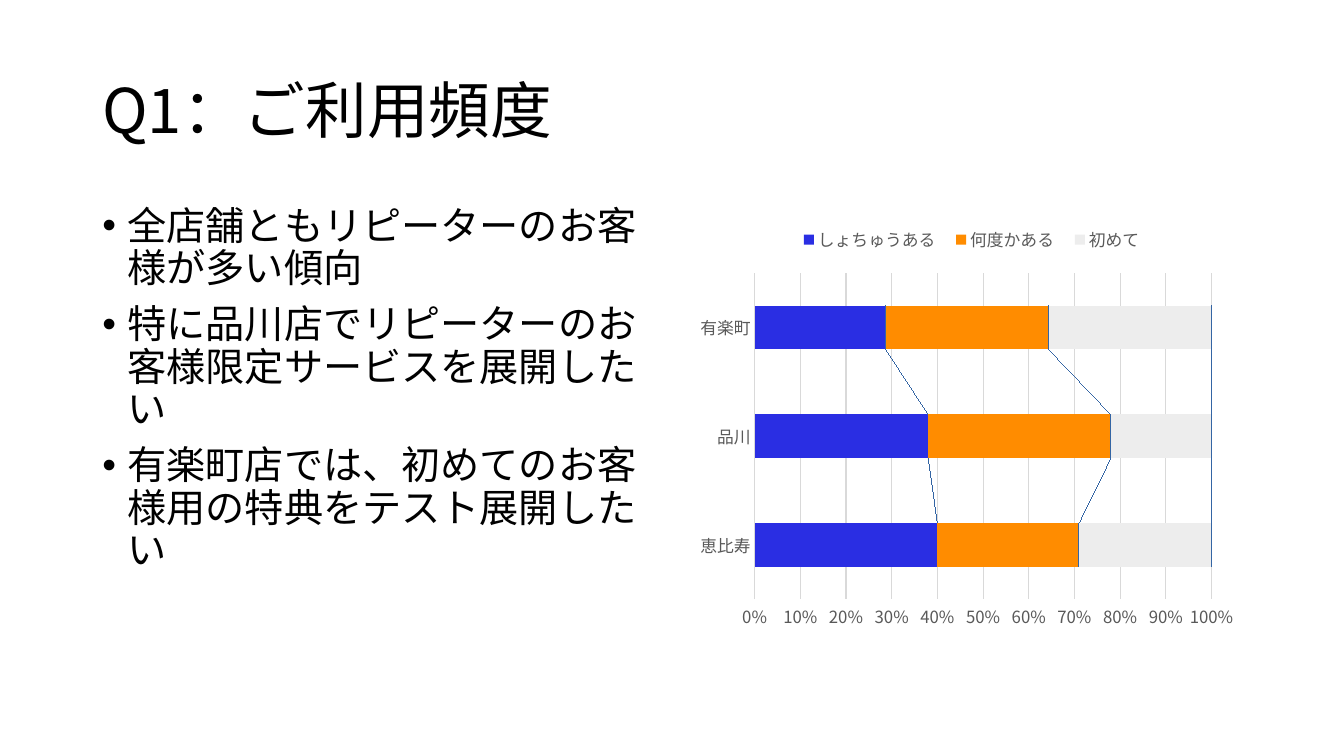
"""Build the Q1 visit frequency slide: title, findings and a stacked bar chart."""
from lxml import etree
from pptx import Presentation
from pptx.chart.data import CategoryChartData
from pptx.dml.color import RGBColor
from pptx.enum.chart import XL_CHART_TYPE, XL_LEGEND_POSITION, XL_TICK_MARK
from pptx.enum.text import MSO_ANCHOR
from pptx.oxml import parse_xml
from pptx.oxml.ns import nsdecls, qn
from pptx.util import Pt

STACKED = XL_CHART_TYPE.BAR_STACKED_100
BOTTOM = XL_LEGEND_POSITION.BOTTOM
NO_TICK = XL_TICK_MARK.NONE
MIDDLE, TOP = MSO_ANCHOR.MIDDLE, MSO_ANCHOR.TOP

THEME = {
    "font": "Noto Sans CJK JP",
    "ink": RGBColor.from_string("000000"),
    "label": RGBColor.from_string("595959"),
    "grid": RGBColor.from_string("D9D9D9"),
    "bars": [RGBColor.from_string(c) for c in ("2A2EE3", "FF8C00", "EDEDED")],
    "title": Pt(44),
    "body": Pt(28),
    "axis": Pt(12),
}


def style(font, size, color):
    font.size = size
    font.color.rgb = color
    font.name = THEME["font"]
    east = etree.SubElement(font._element, qn("a:ea"))
    east.set("typeface", THEME["font"])


def place(box, lines, size, anchor):
    shape = deck_slide.shapes.add_textbox(*[Pt(n) for n in box])
    frame = shape.text_frame
    frame.word_wrap = True
    frame.vertical_anchor = anchor
    frame.text = "\n".join(lines)
    for para in frame.paragraphs:
        para.line_spacing = 0.9
        style(para.runs[0].font, size, THEME["ink"])
    return frame


deck = Presentation()
deck.slide_width, deck.slide_height = Pt(960), Pt(540)
deck_slide = deck.slides.add_slide(deck.slide_layouts[6])

place((66, 28.75, 828, 104.4), ["Q1：ご利用頻度"], THEME["title"], MIDDLE)

points = [
    "全店舗ともリピーターのお客様が多い傾向",
    "特に品川店でリピーターのお客様限定サービスを展開したい",
    "有楽町店では、初めてのお客様用の特典をテスト展開したい",
]
body = place((66, 143.75, 408, 342.6), points, THEME["body"], TOP)
for para in body.paragraphs:
    para.space_before = Pt(10)
    props = para._p.get_or_add_pPr()
    props.set("marL", str(Pt(18)))
    props.set("indent", str(-Pt(18)))
    etree.SubElement(props, qn("a:buFont")).set("typeface", "Arial")
    etree.SubElement(props, qn("a:buChar")).set("char", "•")

data = CategoryChartData()
data.categories = ["恵比寿", "品川", "有楽町"]
data.add_series("しょちゅうある", (40, 38, 29))
data.add_series("何度かある", (31, 40, 36))
data.add_series("初めて", (29, 22, 36))
graph = deck_slide.shapes.add_chart(
    STACKED, Pt(486), Pt(143.75), Pt(408), Pt(342.6), data)
chart = graph.chart
chart.has_title = False
chart.font.name = THEME["font"]
chart.has_legend = True
legend = chart.legend
legend.position = BOTTOM
legend.include_in_layout = False

plot = chart.plots[0]
plot.gap_width, plot.overlap = 150, 100
plot.vary_by_categories = False
for bar, color in zip(plot.series, THEME["bars"]):
    bar.format.fill.solid()
    bar.format.fill.fore_color.rgb = color
overlap = plot._element.find(qn("c:overlap"))
overlap.addnext(parse_xml(f"<c:serLines {nsdecls('c')}/>"))

cats, vals = chart.category_axis, chart.value_axis
for axis in (cats, vals):
    axis.major_tick_mark = axis.minor_tick_mark = NO_TICK
for part in (cats.tick_labels, vals.tick_labels, legend):
    style(part.font, THEME["axis"], THEME["label"])
vals.tick_labels.number_format = "0%"
vals.tick_labels.number_format_is_linked = False
vals.minimum_scale, vals.maximum_scale, vals.major_unit = 0, 1, 0.1
vals.format.line.fill.background()
vals.has_major_gridlines = True
for line in (cats.format.line, vals.major_gridlines.format.line):
    line.color.rgb = THEME["grid"]
    line.width = Pt(0.75)

area = chart._chartSpace.chart.plotArea
for old in area.findall(qn("c:layout")):
    area.remove(old)
spots = [
    (area, 0, "inner", (0.13, 0.15, 0.8, 0.68)),
    (legend._element, 1, None, (0.19, 0.05, 0.64, 0.06)),
]
for old in legend._element.findall(qn("c:layout")):
    legend._element.remove(old)
for host, index, target, box in spots:
    inner = f'<c:layoutTarget val="{target}"/>' if target else ""
    modes = '<c:xMode val="edge"/><c:yMode val="edge"/>'
    sizes = "".join(f'<c:{k} val="{n}"/>' for k, n in zip("xywh", box))
    host.insert(index, parse_xml(
        f"<c:layout {nsdecls('c')}><c:manualLayout>{inner}{modes}{sizes}"
        "</c:manualLayout></c:layout>"))

deck.save("out.pptx")
